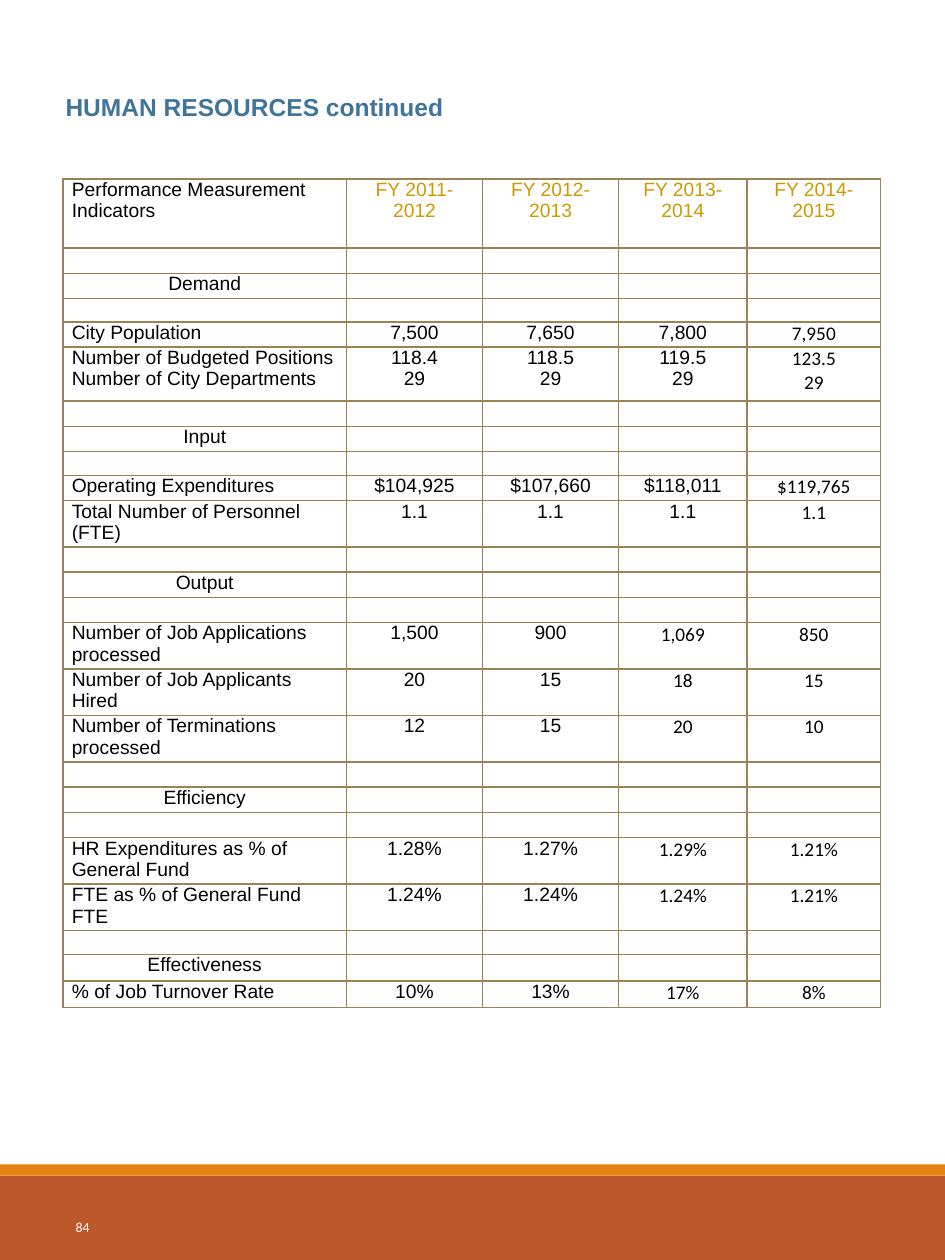
from lxml.etree import SubElement
from pptx import Presentation
from pptx.dml.color import RGBColor
from pptx.enum.shapes import MSO_SHAPE as Shape
from pptx.enum.text import MSO_ANCHOR as Anchor, MSO_AUTO_SIZE as AutoSize, PP_ALIGN as Align
from pptx.oxml.ns import qn
from pptx.util import Inches, Pt

COLUMN_WIDTHS = [2.25, 1.08, 1.08, 1.02, 1.06]
BLANK = (0.2, [])

# Each row is its height and its cell texts.
ROWS = [
    (0.55, ["Performance Measurement Indicators",
            "FY 2011-2012", "FY 2012-2013", "FY 2013-2014", "FY 2014-2015"]),
    BLANK,
    (0.2, ["Demand"]),
    (0.18, []),
    (0.2, ["City Population", "7,500", "7,650", "7,800", "7,950"]),
    (0.43, ["Number of Budgeted Positions\nNumber of City Departments",
            "118.4\n29", "118.5\n29", "119.5\n29", "123.5\n29"]),
    BLANK,
    (0.2, ["Input"]),
    (0.19, []),
    (0.2, ["Operating Expenditures", "$104,925", "$107,660", "$118,011", "$119,765"]),
    (0.34, ["Total Number of Personnel (FTE)", "1.1", "1.1", "1.1", "1.1"]),
    BLANK,
    (0.2, ["Output"]),
    BLANK,
    (0.37, ["Number of Job Applications processed", "1,500", "900", "1,069", "850"]),
    (0.34, ["Number of Job Applicants Hired", "20", "15", "18", "15"]),
    (0.37, ["Number of Terminations processed", "12", "15", "20", "10"]),
    BLANK,
    (0.2, ["Efficiency"]),
    BLANK,
    (0.37, ["HR Expenditures as % of General Fund", "1.28%", "1.27%", "1.29%", "1.21%"]),
    (0.34, ["FTE as % of General Fund FTE", "1.24%", "1.24%", "1.24%", "1.21%"]),
    (0.19, []),
    (0.21, ["Effectiveness"]),
    (0.21, ["% of Job Turnover Rate", "10%", "13%", "17%", "8%"]),
]
OUTPUT_ROW = 12


def color(value):
    return RGBColor.from_string(value)


def set_all(target, values):
    for name, value in values.items():
        setattr(target, name, value)


class PageBuilder:
    black, white, gold = "000000", "FFFFFF", "CC9900"
    blue, border = "40749B", "9B8357"
    size = 11

    def __init__(self, page):
        self.page = page

    def add_text(self, paragraph, text, size, font, ink, bold=False, align=Align.LEFT):
        paragraph.alignment = align
        span = paragraph.add_run()
        span.text = text
        set_all(span.font, {"size": Pt(size), "name": font, "bold": bold})
        span.font.color.rgb = color(ink)

    def band(self, top, height, fill):
        band = self.page.shapes.add_shape(
            Shape.RECTANGLE, 0, Inches(top), Inches(7.5), Inches(height))
        band.shadow.inherit = False
        band.fill.solid()
        band.fill.fore_color.rgb = color(fill)
        band.line.fill.background()

    def title(self, text):
        box = self.page.shapes.title
        set_all(box, {"left": Inches(0.42), "top": Inches(0.67),
                      "width": Inches(5.96), "height": Inches(0.52)})
        box.fill.solid()
        box.fill.fore_color.rgb = color(self.white)
        set_all(box.text_frame, {"vertical_anchor": Anchor.MIDDLE, "word_wrap": True,
                                 "auto_size": AutoSize.NONE,
                                 "margin_bottom": Inches(0.22)})
        self.add_text(box.text_frame.paragraphs[0], text, 14, "Arial", self.blue, True)

    def page_number(self, number):
        box = self.page.shapes.add_textbox(0, Inches(9.47), Inches(0.81), Inches(0.53))
        set_all(box.text_frame, {"vertical_anchor": Anchor.MIDDLE, "word_wrap": True})
        self.add_text(box.text_frame.paragraphs[0], number, 7.9, "Calibri", self.white,
                      align=Align.RIGHT)

    def outline(self, cell):
        """Draw a border on all four sides of a cell."""
        properties = cell._tc.get_or_add_tcPr()
        for side in ("a:lnL", "a:lnR", "a:lnT", "a:lnB"):
            line = SubElement(properties, qn(side), w=str(Pt(1)))
            fill = SubElement(line, qn("a:solidFill"))
            SubElement(fill, qn("a:srgbClr"), val=self.border)

    def fill_cell(self, cell, text, font, ink, align):
        set_all(cell, {"margin_left": Inches(0.07), "margin_right": Inches(0.07),
                       "margin_top": 0, "margin_bottom": 0})
        self.outline(cell)
        cell.fill.background()
        frame = cell.text_frame
        if not text:
            # The end mark sets the height of an empty line.
            end_mark = frame.paragraphs[0]._p.get_or_add_endParaRPr()
            end_mark.set("sz", str(self.size * 100))
            return
        for index, line in enumerate(text.split("\n")):
            paragraph = frame.add_paragraph() if index else frame.paragraphs[0]
            self.add_text(paragraph, line, self.size, font, ink, align=align)

    def table(self, left, top, widths, rows):
        heights = [height for height, _ in rows]
        frame = self.page.shapes.add_table(
            len(rows), len(widths), Inches(left), Inches(top),
            Inches(sum(widths)), Inches(sum(heights)))
        table = frame.table
        set_all(table, {"first_row": False, "horz_banding": False})
        for column, width in zip(table.columns, widths):
            column.width = Inches(width)
        for r, (height, texts) in enumerate(rows):
            table.rows[r].height = Inches(height)
            for c in range(len(widths)):
                text = texts[c] if c < len(texts) else ""
                is_label = c == 0 and len(texts) > 1
                is_calibri = r > 0 and (c == 4 or c == 3 and r > OUTPUT_ROW)
                self.fill_cell(table.cell(r, c), text,
                               "Calibri" if is_calibri else "Arial",
                               self.gold if r == 0 and c > 0 else self.black,
                               Align.LEFT if is_label else Align.CENTER)


def main():
    deck = Presentation()
    set_all(deck, {"slide_width": Inches(7.5), "slide_height": Inches(10)})
    builder = PageBuilder(deck.slides.add_slide(deck.slide_layouts[5]))
    builder.band(9.33, 0.67, "BD582C")
    builder.band(9.24, 0.09, "E48312")
    builder.page_number("84")
    builder.table(0.5, 1.42, COLUMN_WIDTHS, ROWS)
    builder.title("HUMAN RESOURCES continued")
    deck.save("out.pptx")


if __name__ == "__main__":
    main()
